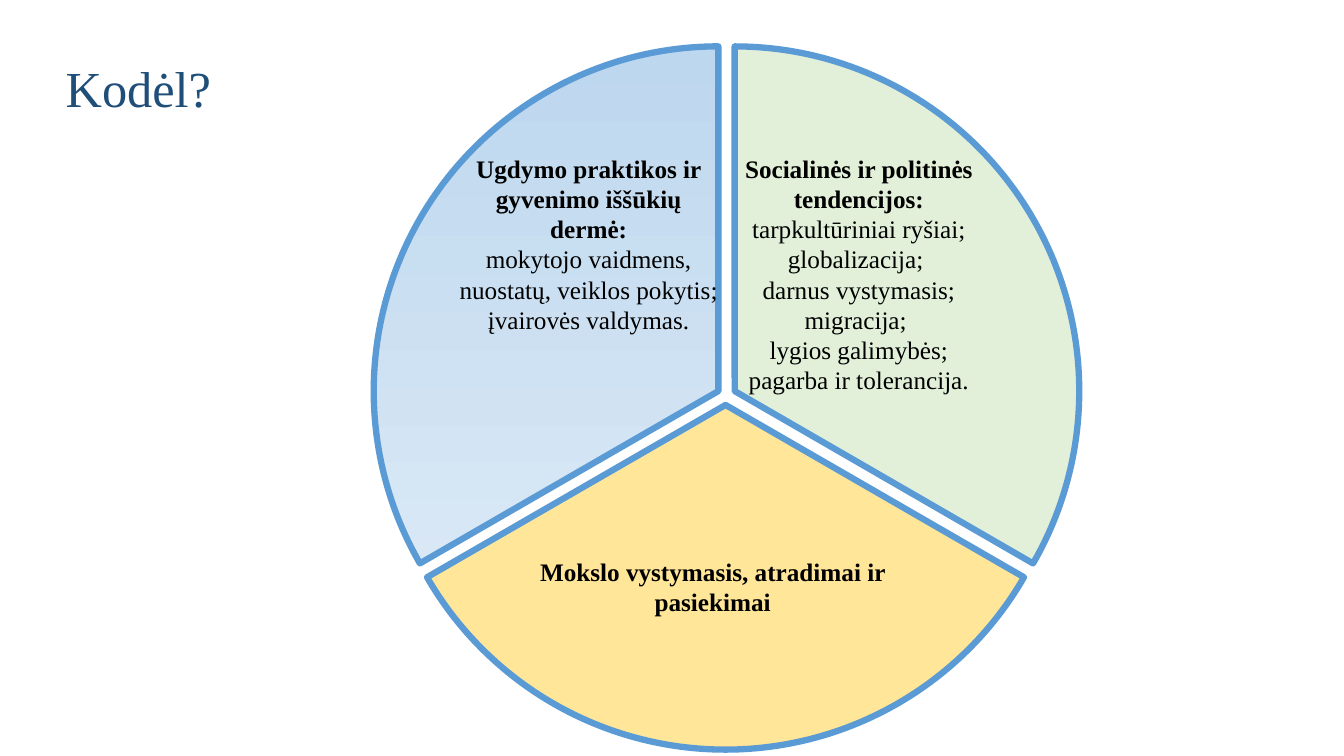
from copy import deepcopy
from dataclasses import dataclass

from pptx import Presentation
from pptx.dml.color import RGBColor
from pptx.enum.shapes import MSO_SHAPE
from pptx.enum.text import MSO_ANCHOR, MSO_AUTO_SIZE, PP_ALIGN
from pptx.util import Cm, Pt


@dataclass(frozen=True)
class Theme:
    font: str = "Times New Roman"
    title_size: int = 36
    body_size: int = 18
    line_width: float = 4.5
    title: str = "1F4E79"
    text: str = "000000"
    outline: str = "5B9BD5"
    green: str = "E2F0D9"
    yellow: str = "FFE699"
    blue: tuple = ((0, "BDD7EE"), (0.88, "DEEBF7"), (1, "889ED7"))


THEME = Theme()
ADJUSTMENT_PER_DEGREE = 0.6

SECTORS = [
    {
        "fill": THEME.green, "angles": (270, 30), "offset": (0.41, 0),
        "text_box": (8.72, 2.56, 7.01, 6.4),
        "heading": "Socialinės ir politinės tendencijos:",
        "details": [
            "tarpkultūriniai ryšiai; globalizacija; ",
            "darnus vystymasis; migracija; ",
            "lygios galimybės; pagarba ir tolerancija.",
        ],
    },
    {
        "fill": THEME.yellow, "angles": (30, 150), "offset": (0.18, 0.35),
        "text_box": (3.03, 12.72, 11.02, 1.8),
        "heading": "Mokslo vystymasis, atradimai ir pasiekimai",
        "details": [],
    },
    {
        "fill": THEME.blue, "angles": (150, 270), "offset": (0, 0),
        "text_box": (1.91, 2.56, 7.01, 5.64),
        "heading": "Ugdymo praktikos ir gyvenimo iššūkių dermė:",
        "details": [
            "mokytojo vaidmens, nuostatų, veiklos pokytis; ",
            "įvairovės valdymas.",
        ],
    },
]


def set_attributes(target, values):
    for name, value in values.items():
        setattr(target, name, value)


def write_paragraph(paragraph, text, size, color, alignment, bold=False):
    paragraph.alignment = alignment
    run = paragraph.add_run()
    run.text = text
    set_attributes(run.font, {"name": THEME.font, "size": Pt(size), "bold": bold})
    run.font.color.rgb = RGBColor.from_string(color)


def format_frame(frame):
    set_attributes(frame, {
        "word_wrap": True,
        "auto_size": MSO_AUTO_SIZE.NONE,
        "vertical_anchor": MSO_ANCHOR.TOP,
    })


def paint_gradient(fill, stops):
    fill.gradient()
    fill.gradient_angle = 270
    first_stop = fill.gradient_stops[0]._gs
    first_stop.addnext(deepcopy(first_stop))
    for stop, (position, color) in zip(fill.gradient_stops, stops):
        stop.position = position
        stop.color.rgb = RGBColor.from_string(color)


def add_title(slide, left, top, width, height):
    title = slide.shapes.title
    set_attributes(title, {
        "left": Cm(left), "top": Cm(top), "width": Cm(width), "height": Cm(height),
    })
    format_frame(title.text_frame)
    write_paragraph(title.text_frame.paragraphs[0], "Kodėl?",
                    THEME.title_size, THEME.title, PP_ALIGN.LEFT)


def add_sector(group, sector, left, top, diameter):
    shift_x, shift_y = sector["offset"]
    shape = group.shapes.add_shape(
        MSO_SHAPE.PIE, Cm(left + shift_x), Cm(top + shift_y), Cm(diameter), Cm(diameter))
    for index, angle in enumerate(sector["angles"]):
        shape.adjustments[index] = angle * ADJUSTMENT_PER_DEGREE
    shape.shadow.inherit = False
    if isinstance(sector["fill"], tuple):
        paint_gradient(shape.fill, sector["fill"])
    else:
        shape.fill.solid()
        shape.fill.fore_color.rgb = RGBColor.from_string(sector["fill"])
    shape.line.color.rgb = RGBColor.from_string(THEME.outline)
    shape.line.width = Pt(THEME.line_width)


def add_sector_text(slide, sector, left, top):
    x, y, width, height = sector["text_box"]
    text_box = slide.shapes.add_textbox(Cm(left + x), Cm(top + y), Cm(width), Cm(height))
    frame = text_box.text_frame
    format_frame(frame)
    for index, text in enumerate([sector["heading"], *sector["details"]]):
        paragraph = frame.add_paragraph() if index else frame.paragraphs[0]
        write_paragraph(paragraph, text, THEME.body_size, THEME.text,
                        PP_ALIGN.CENTER, bold=index == 0)


def add_reason_wheel(slide, left, top, diameter):
    group = slide.shapes.add_group_shape()
    for sector in SECTORS:
        add_sector(group, sector, left, top, diameter)
    for sector in SECTORS:
        add_sector_text(slide, sector, left, top)


def main():
    presentation = Presentation()
    set_attributes(presentation, {"slide_width": Cm(33.87), "slide_height": Cm(19.05)})
    slide = presentation.slides.add_slide(presentation.slide_layouts[5])
    add_title(slide, 1.4, 1.32, 5.36, 1.8)
    add_reason_wheel(slide, 9.42, 1.17, 17.37)
    presentation.save("out.pptx")


if __name__ == "__main__":
    main()
